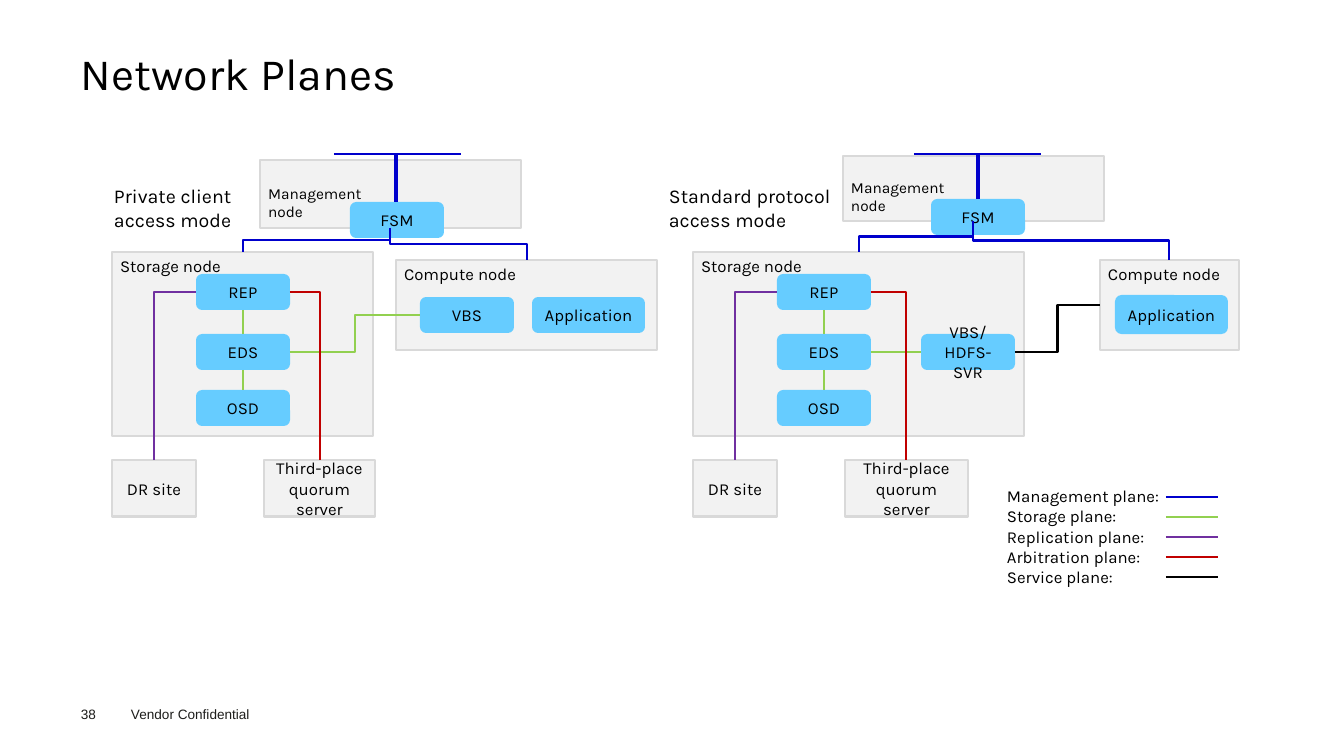
from pptx import Presentation
from pptx.dml.color import RGBColor
from pptx.enum.shapes import MSO_CONNECTOR, MSO_SHAPE
from pptx.enum.text import MSO_ANCHOR, MSO_AUTO_SIZE, PP_ALIGN
from pptx.oxml.ns import qn
from pptx.oxml.xmlchemy import OxmlElement
from pptx.util import Pt

PX = 914400 / 100.8  # EMU per px
RECT, ROUNDED = MSO_SHAPE.RECTANGLE, MSO_SHAPE.ROUNDED_RECTANGLE
STRAIGHT, ELBOW = MSO_CONNECTOR.STRAIGHT, MSO_CONNECTOR.ELBOW
TOP, MIDDLE = MSO_ANCHOR.TOP, MSO_ANCHOR.MIDDLE
LEFT, CENTER = PP_ALIGN.LEFT, PP_ALIGN.CENTER

BLACK = RGBColor(0x00, 0x00, 0x00)
FOOTER_GREY = RGBColor(0x1D, 0x1D, 0x1B)
PANEL_FILL = RGBColor(0xF2, 0xF2, 0xF2)
PANEL_EDGE = RGBColor(0xD9, 0xD9, 0xD9)
SERVICE_FILL = RGBColor(0x66, 0xCC, 0xFF)
MANAGEMENT = RGBColor(0x00, 0x00, 0xCC)
STORAGE = RGBColor(0x92, 0xD0, 0x50)
REPLICATION = RGBColor(0x70, 0x30, 0xA0)
ARBITRATION = RGBColor(0xC0, 0x00, 0x00)
SERVICE = BLACK

# Content: boxes are (left, top, width, height) in px
TITLE = "Network Planes"
LEGEND = [
    ("Management plane:", MANAGEMENT),
    ("Storage plane:", STORAGE),
    ("Replication plane:", REPLICATION),
    ("Arbitration plane:", ARBITRATION),
    ("Service plane:", SERVICE),
]
STORAGE_STACK = [("EDS", 334), ("OSD", 390), ("REP", 274)]
SERVICE_W, SERVICE_H = 94, 36
STACK_INDENT = 84  # from the left edge of the storage node

# Routes are (shape of the route, plane, start, end)
MODES = [
    dict(
        heading=("Private client access mode", (104, 179, 162, 57)),
        management=((260, 160, 261, 68), 24),
        compute=(396, 260, 261, 90),
        storage=(112, 252, 261, 184),
        services=[
            ("FSM", (350, 202, SERVICE_W, SERVICE_H)),
            ("VBS", (420, 297, SERVICE_W, SERVICE_H)),
            ("Application", (532, 297, 113, 36)),
        ],
        quorum=(264, 460, 111, 57),
        routes=[
            ("down-across-down", MANAGEMENT, (390, 228), (243, 252)),
            ("down-across-down", MANAGEMENT, (390, 228), (527, 260)),
            ("across-down-across", STORAGE, (290, 352), (420, 315)),
            ("across-down", ARBITRATION, (290, 292), (320, 460)),
        ],
        uplink=(396, 202),
        bus=(334, 461),
    ),
    dict(
        heading=("Standard protocol access mode", (659, 179, 200, 57)),
        management=((843, 156, 261, 65), 22),
        compute=(1100, 260, 139, 90),
        storage=(693, 252, 331, 184),
        services=[
            ("FSM", (931, 199, SERVICE_W, SERVICE_H)),
            ("VBS/HDFS-SVR", (921, 334, SERVICE_W, SERVICE_H)),
            ("Application", (1115, 295, 113, 39)),
        ],
        quorum=(845, 460, 123, 57),
        routes=[
            ("down-across-down", MANAGEMENT, (973, 221), (859, 252)),
            ("down-across-down", MANAGEMENT, (973, 221), (1169, 260)),
            ("straight", STORAGE, (871, 352), (921, 352)),
            ("across-down", ARBITRATION, (871, 292), (906, 460)),
            ("across-down-across", SERVICE, (1015, 352), (1100, 305)),
        ],
        uplink=(978, 199),
        bus=(914, 1041),
    ),
]
BUS_Y = 154


def emu(*lengths):
    return [round(length * PX) for length in lengths]


def write(shape, text, size=12, font="Karla", color=BLACK, align=LEFT,
          anchor=TOP, insets=(8, 4, 8, 4), spacing=None):
    frame = shape.text_frame
    frame.word_wrap = True
    frame.auto_size = MSO_AUTO_SIZE.NONE
    frame.vertical_anchor = anchor
    (frame.margin_left, frame.margin_top,
     frame.margin_right, frame.margin_bottom) = emu(*insets)
    frame.text = text
    for line in frame.paragraphs:
        line.alignment = align
        line.line_spacing = spacing
        line.font.size = Pt(size)
        line.font.name = font
        line.font.color.rgb = color


def label(box, text, **text_format):
    write(slide.shapes.add_textbox(*emu(*box)), text, **text_format)


def block(kind, box, text, fill, edge=None, **text_format):
    shape = slide.shapes.add_shape(kind, *emu(*box))
    shape.shadow.inherit = False
    shape.fill.solid()
    shape.fill.fore_color.rgb = fill
    if edge is None:
        shape.line.fill.background()
    else:
        shape.line.color.rgb = edge
        shape.line.width = Pt(2)
    write(shape, text, **text_format)


def panel(box, text, **text_format):
    block(RECT, box, text, PANEL_FILL, PANEL_EDGE, **text_format)


def service(box, text):
    block(ROUNDED, box, text, SERVICE_FILL, align=CENTER, anchor=MIDDLE)


def link(route, plane, start, end, width=2):
    (x1, y1), (x2, y2) = start, end
    rotation = 0
    if route == "down-across-down":
        # A sideways elbow turned about its middle
        mid_x, mid_y = (x1 + x2) / 2, (y1 + y2) / 2
        half_w, half_h = (y2 - y1) / 2, abs(x2 - x1) / 2
        rotation = 90 if x2 < x1 else 270
        if rotation == 270:
            half_w = -half_w
        x1, x2 = mid_x - half_w, mid_x + half_w
        y1, y2 = mid_y - half_h, mid_y + half_h
    kind = STRAIGHT if route == "straight" else ELBOW
    line = slide.shapes.add_connector(kind, *emu(x1, y1, x2, y2))
    line.line.color.rgb = plane
    line.line.width = Pt(width)
    properties = line._element.spPr
    properties.append(OxmlElement("a:effectLst"))
    if rotation:
        properties.find(qn("a:xfrm")).set("rot", str(rotation * 60000))
    if route == "across-down":
        properties.find(qn("a:prstGeom")).set("prst", "bentConnector2")


def draw_mode(mode):
    # Nodes
    management_box, management_inset = mode["management"]
    panel(management_box, "Management\nnode", size=11,
          insets=(8, management_inset, 8, 4))
    panel(mode["compute"], "Compute node")
    panel(mode["storage"], "Storage node")
    left = mode["storage"][0]
    panel((left, 460, 84, 57), "DR site", align=CENTER, anchor=MIDDLE)
    panel(mode["quorum"], "Third-place quorum server", align=CENTER, anchor=MIDDLE)

    # Services
    stack_x = left + STACK_INDENT
    for name, top in STORAGE_STACK:
        service((stack_x, top, SERVICE_W, SERVICE_H), name)
    for name, box in mode["services"]:
        service(box, name)

    # Planes
    stack_mid = stack_x + SERVICE_W // 2
    for top, bottom in [(310, 334), (370, 390)]:
        link("straight", STORAGE, (stack_mid, top), (stack_mid, bottom))
    link("across-down", REPLICATION, (stack_x, 292), (left + 42, 460))
    for route in mode["routes"]:
        link(*route)
    uplink_x, uplink_y = mode["uplink"]
    link("straight", MANAGEMENT, (uplink_x, uplink_y), (uplink_x, BUS_Y), width=2.25)
    bus_start, bus_end = mode["bus"]
    link("straight", MANAGEMENT, (bus_start, BUS_Y), (bus_end, BUS_Y))

    heading, heading_box = mode["heading"]
    label(heading_box, heading, size=14, insets=(10, 5, 10, 5))


deck = Presentation()
deck.slide_width, deck.slide_height = emu(1344, 756)
slide = deck.slides.add_slide(deck.slide_layouts[5])

# Title and footer
title = slide.shapes.title
title.left, title.top, title.width, title.height = emu(81, 49, 1182, 54)
write(title, TITLE, size=32, anchor=MIDDLE, insets=(0, 0, 0, 0), spacing=0.9)
footer = dict(size=9.7, font="Arial", color=FOOTER_GREY)
label((121, 701, 161, 27), "Vendor Confidential", insets=(10, 5, 10, 5), **footer)
label((81, 706, 40, 16), "38", insets=(0, 0, 0, 0), **footer)

# Access modes
for access_mode in MODES:
    draw_mode(access_mode)

# Legend
label((997, 486, 237, 107), "\n".join(name for name, _ in LEGEND), insets=(10, 0, 10, 5))
for row, (_, plane_color) in enumerate(LEGEND):
    row_y = 497 + 20 * row
    link("straight", plane_color, (1166, row_y), (1218, row_y))

deck.save("out.pptx")
